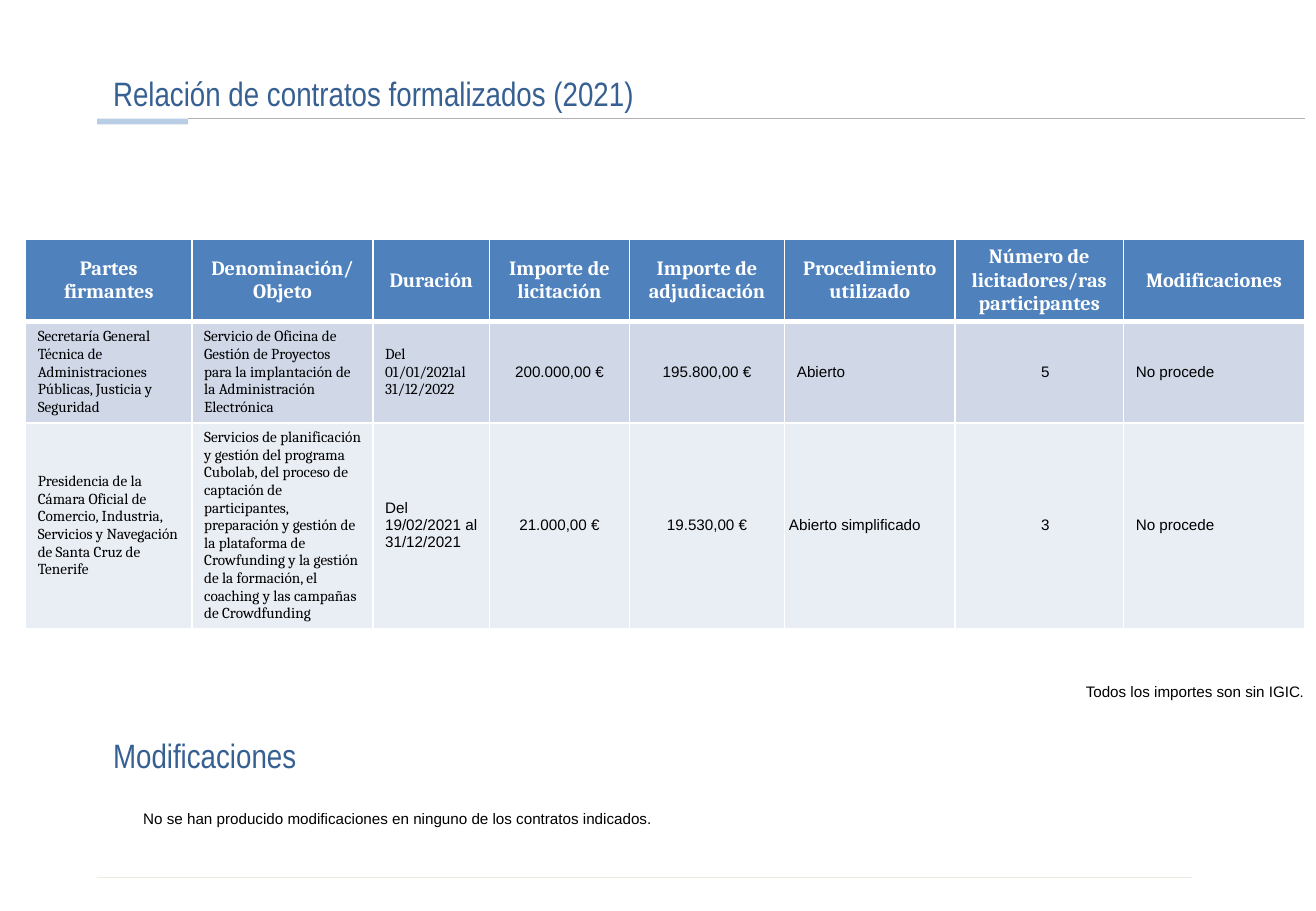
from dataclasses import dataclass

from lxml import etree
from pptx import Presentation
from pptx.dml.color import RGBColor
from pptx.enum import shapes, text
from pptx.oxml import ns
from pptx.util import Pt

COLORS = {
    "heading": "376092",
    "accent": "B9CDE5",
    "title_rule": "B2B2B2",
    "footer_rule": "EEECE1",
    "header": "4F81BD",
    "odd_row": "D0D8E8",
    "even_row": "E9EDF4",
    "white": "FFFFFF",
    "black": "000000",
}
LEFT, CENTER, JUSTIFY = text.PP_ALIGN.LEFT, text.PP_ALIGN.CENTER, text.PP_ALIGN.JUSTIFY
COLUMN_WIDTHS = (98.64, 107.28, 69.12, 82.8, 92.16, 100.8, 100.08, 107.28)
ROW_HEIGHTS = (47.5, 60, 121.5)
ROW_FILLS = ("header", "odd_row", "even_row")
HEADERS = (
    "Partes firmantes", "Denominación/Objeto", "Duración", "Importe de licitación",
    "Importe de adjudicación", "Procedimiento utilizado",
    "Número de licitadores/ras participantes", "Modificaciones",
)


@dataclass(frozen=True)
class Style:
    font: str
    size: float
    color: str
    bold: bool = False
    align: text.PP_ALIGN = LEFT
    spacing: float = 1.0


@dataclass(frozen=True)
class Entry:
    wording: str
    style: Style
    tight: bool = False
    indent: float = 0


@dataclass(frozen=True)
class Rule:
    left: float
    right: float
    top: float
    color: str
    width: float


HEADING = Style("Arial Narrow", 20, "heading", spacing=0.9)
HEADER = Style("Cambria", 12, "white", True, CENTER)
SERIF = Style("Cambria", 9, "black")
SERIF_JUSTIFIED = Style("Cambria", 9, "black", align=JUSTIFY)
SANS = Style("Arial", 9, "black")
SANS_CENTERED = Style("Arial", 9, "black", align=CENTER)

CONTRACTS = (
    tuple(Entry(header, HEADER) for header in HEADERS),
    (
        Entry("Secretaría General Técnica de Administraciones Públicas, Justicia y Seguridad", SERIF),
        Entry("Servicio de Oficina de Gestión de Proyectos para la implantación de la "
              "Administración Electrónica", SERIF),
        Entry("Del 01/01/2021al 31/12/2022", SERIF_JUSTIFIED),
        Entry("200.000,00 €", SANS_CENTERED),
        Entry("195.800,00 €", SANS_CENTERED, True),
        Entry("Abierto", SANS, True, 7.2),
        Entry("5", SANS_CENTERED, True, 7.2),
        Entry("No procede", SANS, True, 7.2),
    ),
    (
        Entry("Presidencia de la Cámara Oficial de Comercio, Industria, Servicios y "
              "Navegación de Santa Cruz de Tenerife", SERIF),
        Entry("Servicios de planificación y gestión del programa Cubolab, del proceso de "
              "captación de participantes, preparación y gestión de la plataforma de "
              "Crowfunding y la gestión de la formación, el coaching y las campañas de "
              "Crowdfunding", SERIF),
        Entry("Del 19/02/2021 al 31/12/2021", SANS),
        Entry("21.000,00 €", SANS_CENTERED),
        Entry("19.530,00 €", SANS_CENTERED, True),
        Entry("Abierto simplificado", SANS, True, 2.5),
        Entry("3", SANS_CENTERED, True, 7.2),
        Entry("No procede", SANS, True, 7.2),
    ),
)
RULES = (
    Rule(57.6, 706.3, 519.8, "footer_rule", 0.25),
    Rule(111.6, 773.3, 70.4, "title_rule", 0.5),
)


def rgb(name: str) -> RGBColor:
    return RGBColor.from_string(COLORS[name])


def format_paragraph(paragraph, style: Style) -> None:
    paragraph.alignment = style.align
    paragraph.line_spacing = style.spacing
    paragraph.font.name = style.font
    paragraph.font.size = Pt(style.size)
    paragraph.font.bold = style.bold
    paragraph.font.color.rgb = rgb(style.color)


def clear_margins(area) -> None:
    area.margin_left = area.margin_right = area.margin_top = area.margin_bottom = 0


def write_heading(shape, wording: str, top: float) -> None:
    shape.left, shape.top, shape.width, shape.height = Pt(67), Pt(top), Pt(667.4), Pt(21.6)
    frame = shape.text_frame
    frame.text = wording
    frame.word_wrap = True
    frame.auto_size = text.MSO_AUTO_SIZE.NONE
    frame.vertical_anchor = text.MSO_ANCHOR.BOTTOM
    clear_margins(frame)
    format_paragraph(frame.paragraphs[0], HEADING)


def add_note(slide, wording: str, left: float, top: float, width: float):
    frame = slide.shapes.add_textbox(Pt(left), Pt(top), Pt(width), Pt(18)).text_frame
    frame.word_wrap = True
    frame.margin_right = 0
    frame.text = wording
    format_paragraph(frame.paragraphs[0], SANS)
    return frame.paragraphs[0]


def add_rule(slide, rule: Rule) -> None:
    line = slide.shapes.add_connector(
        shapes.MSO_CONNECTOR.STRAIGHT, Pt(rule.left), Pt(rule.top), Pt(rule.right), Pt(rule.top))
    line.line.color.rgb = rgb(rule.color)
    line.line.width = Pt(rule.width)
    etree.SubElement(line._element.spPr, ns.qn("a:effectLst"))


def set_borders(cell, heavy_sides: tuple[str, ...]) -> None:
    properties = cell._tc.get_or_add_tcPr()
    for position, side in enumerate(("lnL", "lnR", "lnT", "lnB")):
        border = etree.Element(ns.qn(f"a:{side}"), w=str(Pt(3 if side in heavy_sides else 1)))
        fill = etree.SubElement(border, ns.qn("a:solidFill"))
        etree.SubElement(fill, ns.qn("a:srgbClr"), val=COLORS["white"])
        properties.insert(position, border)


def fill_cell(cell, entry: Entry, row: int) -> None:
    cell.text = entry.wording
    cell.vertical_anchor = text.MSO_ANCHOR.MIDDLE
    if entry.tight:
        clear_margins(cell)
    paragraph = cell.text_frame.paragraphs[0]
    if entry.indent:
        paragraph._p.get_or_add_pPr().set("marL", str(Pt(entry.indent)))
    format_paragraph(paragraph, entry.style)
    cell.fill.solid()
    cell.fill.fore_color.rgb = rgb(ROW_FILLS[row])
    set_borders(cell, {0: ("lnB",), 1: ("lnT",)}.get(row, ()))


def add_contracts(slide) -> None:
    table = slide.shapes.add_table(
        len(ROW_HEIGHTS), len(COLUMN_WIDTHS), Pt(15.2), Pt(142),
        Pt(sum(COLUMN_WIDTHS)), Pt(sum(ROW_HEIGHTS))).table
    for column, width in zip(table.columns, COLUMN_WIDTHS):
        column.width = Pt(width)
    for row, (height, entries) in enumerate(zip(ROW_HEIGHTS, CONTRACTS)):
        table.rows[row].height = Pt(height)
        for column, entry in enumerate(entries):
            fill_cell(table.cell(row, column), entry, row)


def main() -> None:
    presentation = Presentation()
    presentation.slide_width, presentation.slide_height = Pt(780), Pt(540)
    slide = presentation.slides.add_slide(presentation.slide_layouts[5])
    for rule in RULES:
        add_rule(slide, rule)
    accent = slide.shapes.add_shape(
        shapes.MSO_SHAPE.RECTANGLE, Pt(57.6), Pt(70.4), Pt(54), Pt(3.4))
    accent.shadow.inherit = False
    accent.fill.solid()
    accent.fill.fore_color.rgb = rgb("accent")
    accent.line.fill.background()
    write_heading(slide.shapes.title, "Relación de contratos formalizados (2021)", 46.1)
    add_contracts(slide)
    taxes = add_note(slide, "Todos los importes son sin IGIC", 636.5, 401, 143.5)
    period = taxes.add_run()
    period.text = "."
    period.font.name = "Cambria"
    write_heading(slide.shapes.add_textbox(0, 0, 0, 0), "Modificaciones", 438.5)
    add_note(slide, "No se han producido modificaciones en ninguno de los contratos indicados.",
             77.8, 476, 456.5)
    presentation.save("out.pptx")


if __name__ == "__main__":
    main()
